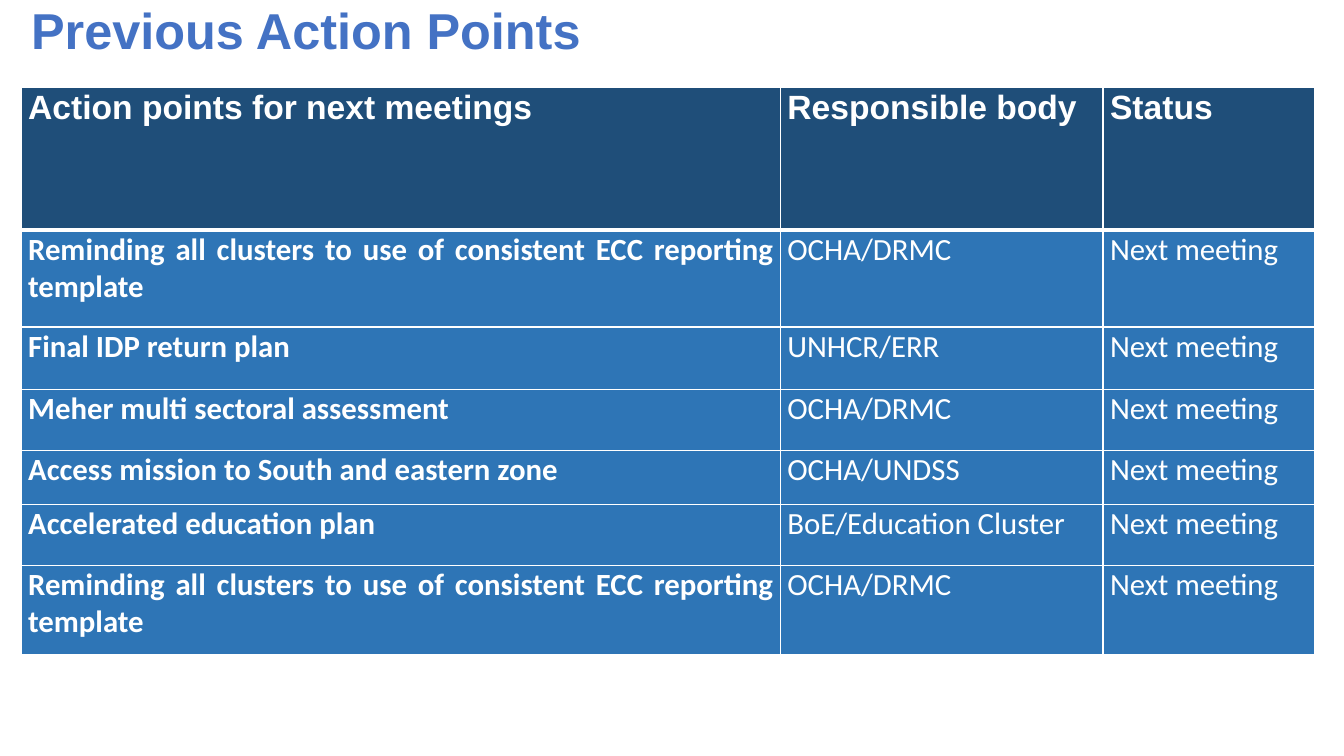
from dataclasses import dataclass
from lxml.etree import SubElement
from pptx import Presentation
from pptx.dml.color import RGBColor
from pptx.enum.text import MSO_ANCHOR, PP_ALIGN
from pptx.oxml.ns import qn
from pptx.util import Inches, Pt


@dataclass(frozen=True)
class Theme:
    title_color: str = "4472C4"
    header_fill: str = "1F4E79"
    body_fill: str = "2E75B6"
    light: str = "FFFFFF"
    heading_font: str = "Arial"
    body_font: str = "Calibri"
    title_size: int = 36
    header_size: int = 24
    body_size: int = 22
    rule: int = 1
    header_rule: int = 3


@dataclass(frozen=True)
class Box:
    left: float
    top: float
    width: float
    height: float

    def lengths(self):
        return [Inches(v) for v in (self.left, self.top, self.width, self.height)]


THEME = Theme()
SLIDE_WIDTH, SLIDE_HEIGHT = 13.33, 7.5
TITLE_BOX = Box(0.21, -0.22, 12.08, 1.09)
TABLE_BOX = Box(0.21, 0.87, 12.83, 5.63)
COLUMN_SHARES = (7.53, 3.2, 2.1)
ROW_SHARES = (1.41, 0.96, 0.62, 0.6, 0.54, 0.6, 0.89)

HEADINGS = ("Action points for next meetings", "Responsible body", "Status")
REMINDER = "Reminding all clusters to use of consistent ECC reporting template"
NEXT = "Next meeting"
ACTIONS = (
    (REMINDER, "OCHA/DRMC", NEXT),
    ("Final IDP return plan", "UNHCR/ERR", NEXT),
    ("Meher multi sectoral assessment", "OCHA/DRMC", NEXT),
    ("Access mission to South and eastern zone", "OCHA/UNDSS", NEXT),
    ("Accelerated education plan", "BoE/Education Cluster", NEXT),
    (REMINDER, "OCHA/DRMC", NEXT),
)


def write(frame, text, font, size, color, bold, align=PP_ALIGN.LEFT):
    frame.text = text
    paragraph = frame.paragraphs[0]
    paragraph.alignment = align
    style = paragraph.runs[0].font
    style.name, style.size, style.bold = font, Pt(size), bold
    style.color.rgb = RGBColor.from_string(color)
    return paragraph


def rule_cell(cell, top, bottom):
    properties = cell._tc.get_or_add_tcPr()
    weights = {"L": THEME.rule, "R": THEME.rule, "T": top, "B": bottom}
    for side, weight in weights.items():
        line = SubElement(properties, qn(f"a:ln{side}"), w=str(Pt(weight)))
        SubElement(SubElement(line, qn("a:solidFill")), qn("a:srgbClr"), val=THEME.light)


def add_title(slide, box, text):
    frame = slide.shapes.add_textbox(*box.lengths()).text_frame
    frame.word_wrap = True
    frame.vertical_anchor = MSO_ANCHOR.MIDDLE
    paragraph = write(frame, text, THEME.heading_font, THEME.title_size, THEME.title_color, True)
    paragraph.line_spacing = 0.9


def fill_cell(cell, text, row, column):
    header = row == 0
    cell.margin_left = cell.margin_right = Inches(0.07)
    cell.margin_top, cell.margin_bottom = Inches(0.01), 0
    rule_cell(cell, THEME.header_rule if row == 1 else THEME.rule,
              THEME.header_rule if header else THEME.rule)
    cell.fill.solid()
    cell.fill.fore_color.rgb = RGBColor.from_string(
        THEME.header_fill if header else THEME.body_fill)
    write(cell.text_frame, text,
          THEME.heading_font if header else THEME.body_font,
          THEME.header_size if header else THEME.body_size,
          THEME.light, header or column == 0,
          PP_ALIGN.LEFT if header else PP_ALIGN.JUSTIFY)


def add_action_table(slide, box, records):
    table = slide.shapes.add_table(
        len(records), len(COLUMN_SHARES), *box.lengths()).table
    for column, share in zip(table.columns, COLUMN_SHARES):
        column.width = Inches(box.width * share / sum(COLUMN_SHARES))
    for row, share in zip(table.rows, ROW_SHARES):
        row.height = Inches(box.height * share / sum(ROW_SHARES))
    for row, record in enumerate(records):
        for column, text in enumerate(record):
            fill_cell(table.cell(row, column), text, row, column)


def main():
    deck = Presentation()
    deck.slide_width, deck.slide_height = Inches(SLIDE_WIDTH), Inches(SLIDE_HEIGHT)
    slide = deck.slides.add_slide(deck.slide_layouts[6])
    add_title(slide, TITLE_BOX, "Previous Action Points")
    add_action_table(slide, TABLE_BOX, (HEADINGS, *ACTIONS))
    deck.save("out.pptx")


if __name__ == "__main__":
    main()
